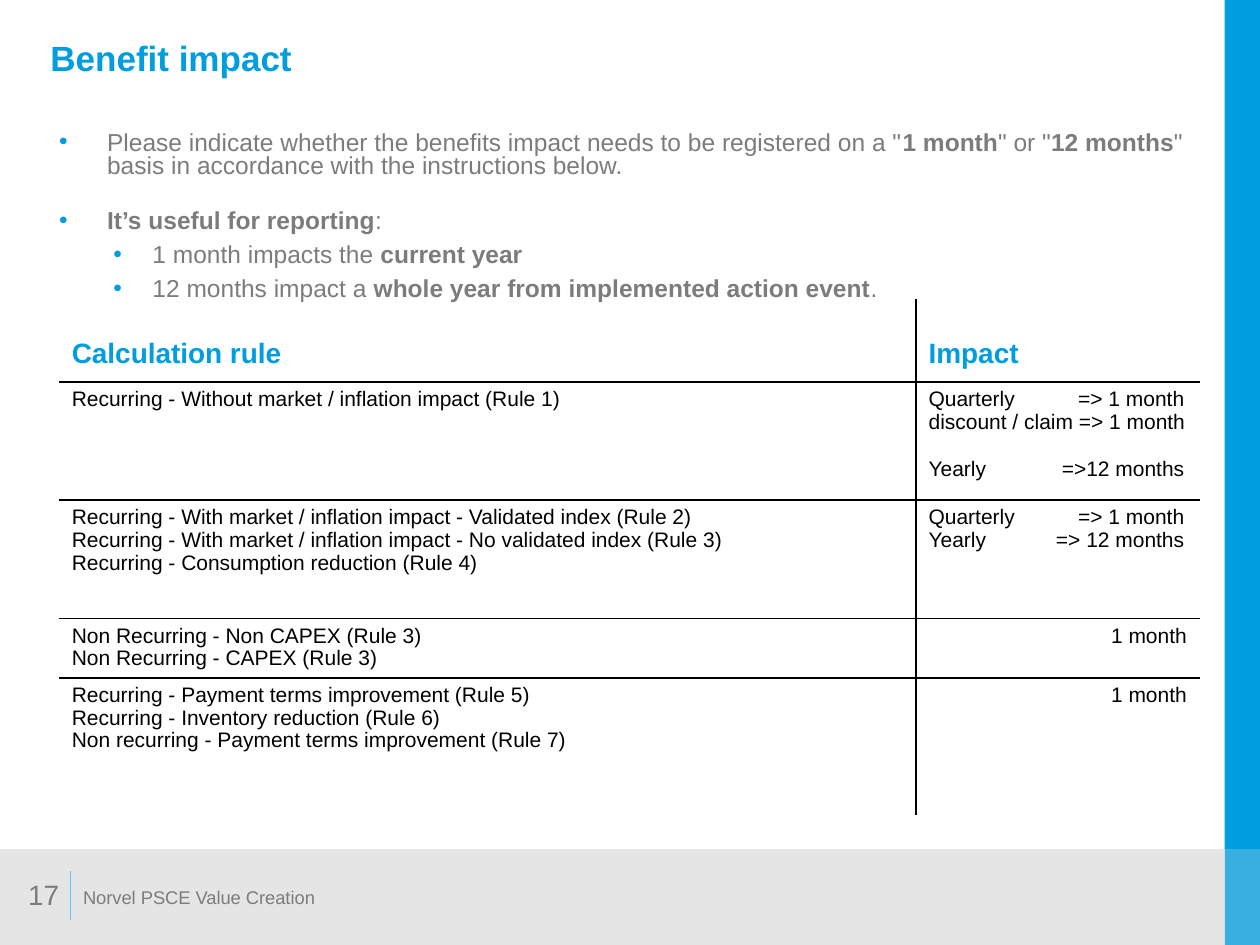
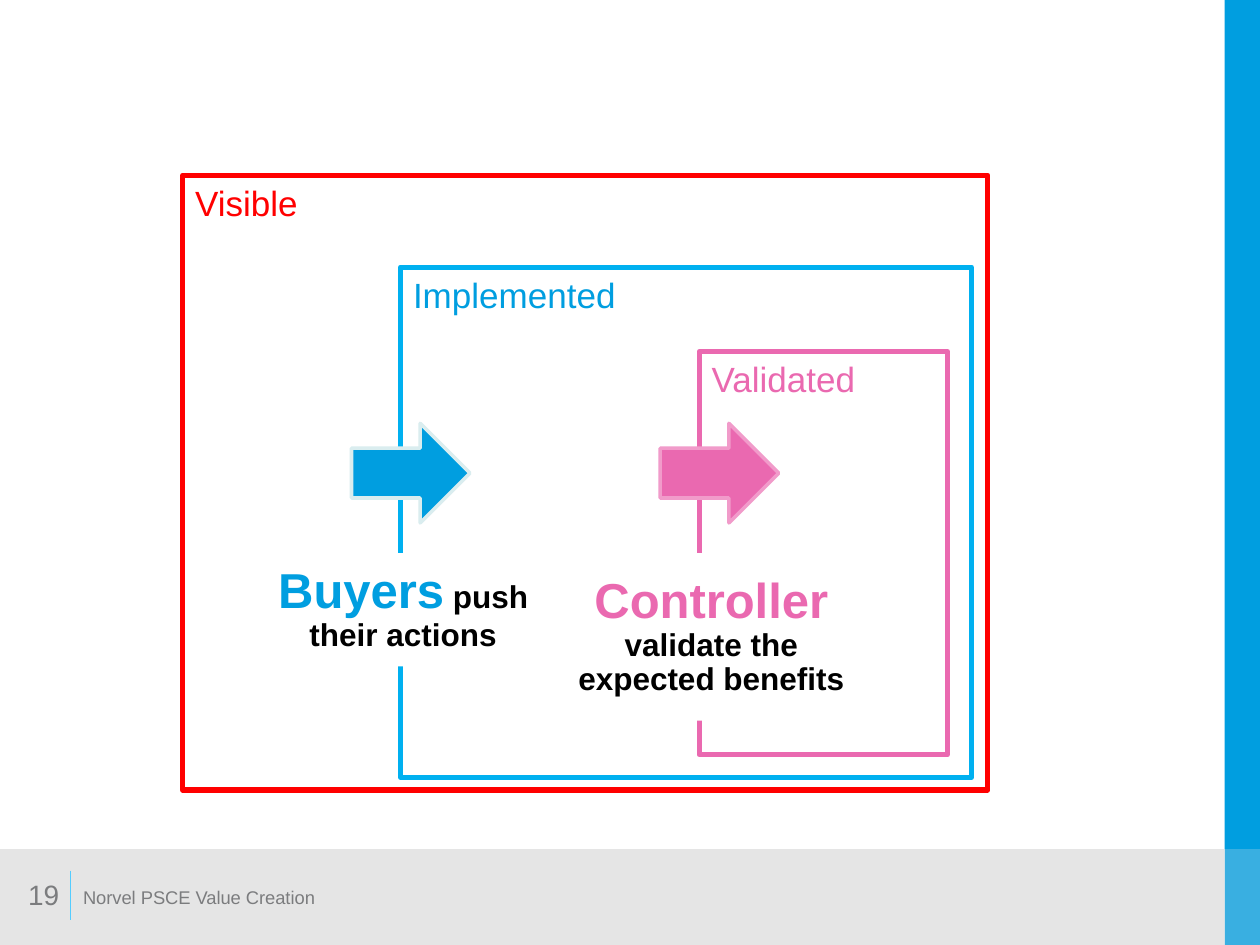
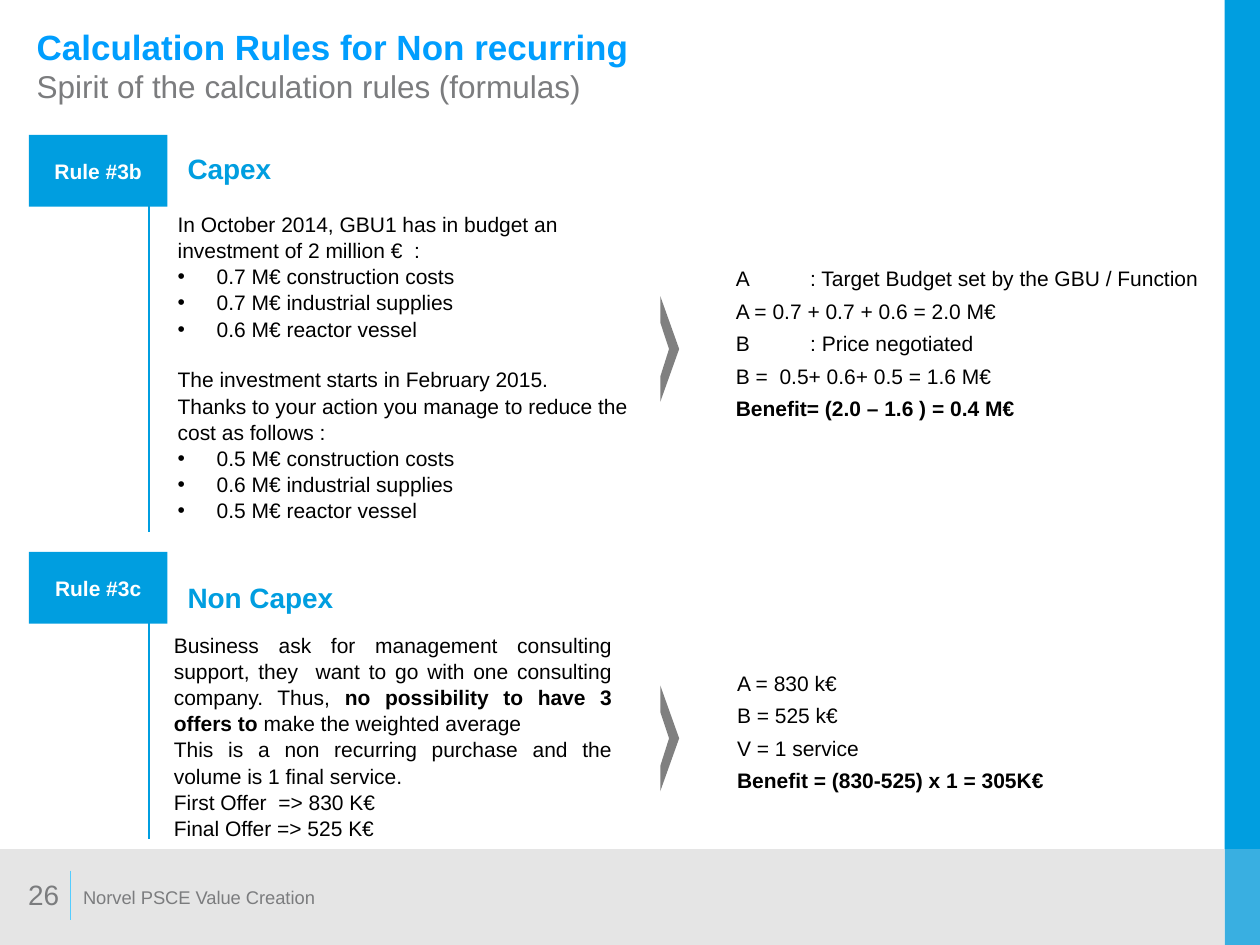
"""Builds three slides on benefit calculation rules."""
from lxml import etree
from pptx import Presentation
from pptx.dml.color import RGBColor
from pptx.enum.shapes import MSO_CONNECTOR, MSO_SHAPE
from pptx.enum.text import MSO_ANCHOR, MSO_AUTO_SIZE, PP_ALIGN
from pptx.oxml.ns import qn
from pptx.util import Inches, Pt

RECTANGLE, ARROW = MSO_SHAPE.RECTANGLE, MSO_SHAPE.RIGHT_ARROW
STRAIGHT = MSO_CONNECTOR.STRAIGHT
TOP, MIDDLE, BOTTOM = MSO_ANCHOR.TOP, MSO_ANCHOR.MIDDLE, MSO_ANCHOR.BOTTOM
LEFT, CENTER, RIGHT, JUSTIFY = PP_ALIGN.LEFT, PP_ALIGN.CENTER, PP_ALIGN.RIGHT, PP_ALIGN.JUSTIFY
FIXED = MSO_AUTO_SIZE.NONE

COLUMNS, ROWS = 100, 75
CELL = Inches(0.1)
BLUE, GRAY, PALE, PINK = "009EE0", "7B7C7E", "E5E5E5", "EA69B0"
BLACK, WHITE, RED = "000000", "FFFFFF", "FF0000"
FLUSH = dict.fromkeys(("margin_left", "margin_top", "margin_right", "margin_bottom"), 0)
BLANK_LINE = Pt(14)
NO_STYLE = "{2D5ABB26-0587-4C30-8999-92F81FD0307C}"


def rgb(code):
    """Turn a hex string into a colour."""
    return RGBColor.from_string(code)


def grid(*values):
    """Turn grid units into lengths."""
    return [int(value * CELL) for value in values]


def set_values(target, values):
    """Set attributes from a dict of format values."""
    for name, value in values.items():
        setattr(target, name, value)


def font(size, color, bold=False):
    """Describe a font."""
    return {"size": Pt(size), "color": color, "bold": bold}


def child(parent, tag, **attributes):
    """Append an XML element."""
    return etree.SubElement(parent, qn(tag), attributes)


def bullet(text, color=BLACK, left=3.1, hang=3.1, **values):
    """Describe a bulleted paragraph."""
    return text, {"bullet": color, "indent": (left, hang), **values}


class Page:
    """Holds the style and the current slide."""

    def __init__(self, deck, layout, number):
        """Add a slide with its bands and footer."""
        self.shapes = deck.slides.add_slide(deck.slide_layouts[layout]).shapes
        edge, floor = 97.2, 67.4
        self.box((edge, 0, COLUMNS - edge, ROWS), fill=BLUE)
        self.box((0, floor, edge, ROWS - floor), fill=PALE)
        corner = self.box((edge, floor, COLUMNS - edge, ROWS - floor), fill=PALE)
        tint = corner._element.spPr.find(qn("a:solidFill"))[0]
        child(tint, "a:alpha", val="25000")
        self.line((5.6, 69.1), (5.6, 73), "53CCFF", 0.75)
        self.text((6.6, 70.3, 63, 2.8), ["Norvel PSCE Value Creation"], font(10.5, GRAY), FLUSH)
        self.text((0, 69, 4.7, 3.9), [str(number)], font(16, GRAY),
                  {**FLUSH, "vertical_anchor": MIDDLE}, alignment=RIGHT)

    def compose(self, frame, paragraphs, style, **common):
        """Fill a text frame; double asterisks switch bold on and off."""
        for index, entry in enumerate(paragraphs):
            content, own = (entry, {}) if isinstance(entry, str) else entry
            values = {**common, **own}
            para = frame.paragraphs[0] if index == 0 else frame.add_paragraph()
            color = values.pop("bullet", None)
            left, hang = values.pop("indent", (0, 0))
            tab = values.pop("tab", None)
            if index == 0:
                values["space_before"] = Pt(0)
            set_values(para, values)
            properties = para._p.get_or_add_pPr()
            if color:
                margin, indent = grid(left, -hang)
                properties.set("marL", str(margin))
                properties.set("indent", str(indent))
                child(child(properties, "a:buClr"), "a:srgbClr", val=color)
                child(properties, "a:buFont", typeface="Arial")
                child(properties, "a:buChar", char="•")
            if tab:
                position, side = tab
                child(child(properties, "a:tabLst"), "a:tab",
                      pos=str(grid(position)[0]), algn=side)
            if isinstance(content, str):
                content = [(piece, {"bold": True} if turn % 2 else {})
                           for turn, piece in enumerate(content.split("**"))]
            for words, change in content:
                if words:
                    span = para.add_run()
                    span.text = words
                    look = {"name": "Arial", **style, **change}
                    span.font.color.rgb = rgb(look.pop("color"))
                    set_values(span.font, look)

    def fill_frame(self, frame, paragraphs, style, layout, **common):
        """Format a text frame and put text into it."""
        set_values(frame, {"word_wrap": True, "auto_size": FIXED,
                           "vertical_anchor": TOP, **layout})
        self.compose(frame, paragraphs, style, **common)

    def text(self, at, paragraphs, style, layout=FLUSH, **common):
        """Add a text box."""
        box = self.shapes.add_textbox(*grid(*at))
        self.fill_frame(box.text_frame, paragraphs, style, layout, **common)

    def placeholder(self, index, at, paragraphs, style, layout, **common):
        """Move and fill a template placeholder."""
        box = self.shapes.title if index == 0 else self.shapes.placeholders[index]
        set_values(box, dict(zip(("left", "top", "width", "height"), grid(*at))))
        self.fill_frame(box.text_frame, paragraphs, style, layout, **common)

    def paint(self, shape, fill, line, width):
        """Set the fill and outline of a shape."""
        shape.shadow.inherit = False
        if fill:
            shape.fill.solid()
            shape.fill.fore_color.rgb = rgb(fill)
        else:
            shape.fill.background()
        if line:
            shape.line.color.rgb = rgb(line)
            shape.line.width = Pt(width)
        else:
            shape.line.fill.background()

    def box(self, at, fill=None, line=None, width=1, kind=RECTANGLE):
        """Add a preset shape."""
        shape = self.shapes.add_shape(kind, *grid(*at))
        self.paint(shape, fill, line, width)
        return shape

    def label(self, at, paragraphs, style, layout, fill=None, line=None, **common):
        """Add a rectangle with text."""
        shape = self.box(at, fill, line, 3)
        self.fill_frame(shape.text_frame, paragraphs, style, layout, **common)

    def line(self, start, end, color, width):
        """Add a straight line."""
        connector = self.shapes.add_connector(STRAIGHT, *grid(*start, *end))
        connector.line.color.rgb = rgb(color)
        connector.line.width = Pt(width)
        child(connector._element.spPr, "a:effectLst")

    def chevron(self, left, top):
        """Add a thin chevron pointing right."""
        outline = [(0, 0), (0, 2.1), (0.7, 4.2), (0, 6.4), (0, 8.4), (1.5, 4.2)]
        points = [grid(left + across, top + down) for across, down in outline]
        builder = self.shapes.build_freeform(*points[0], scale=1.0)
        builder.add_line_segments(points[1:], close=True)
        self.paint(builder.convert_to_shape(), "808080", None, 0)

    def table(self, at, widths, heights, rows):
        """Add a table ruled between its rows and columns."""
        table = self.shapes.add_table(len(rows), len(widths), *grid(*at)).table
        set_values(table, {"first_row": False, "horz_banding": False})
        table._tbl.tblPr.find(qn("a:tableStyleId")).text = NO_STYLE
        for column, width in zip(table.columns, grid(*widths)):
            column.width = width
        for row, height in zip(table.rows, grid(*heights)):
            row.height = height
        for down, cells in enumerate(rows):
            for across, paragraphs in enumerate(cells):
                cell = table.cell(down, across)
                sides = {"a:lnL": across > 0, "a:lnR": across < len(widths) - 1,
                         "a:lnT": down > 0, "a:lnB": down < len(rows) - 1}
                self.rule(cell, [side for side, inner in sides.items() if inner])
                cell.fill.background()
                if down == 0:
                    set_values(cell, {"vertical_anchor": BOTTOM, "margin_bottom": CELL})
                style = font(12, BLACK) if down else font(16, BLUE, True)
                self.compose(cell.text_frame, paragraphs, style, line_spacing=0.97)

    def rule(self, cell, sides):
        """Draw black borders on the given sides of a cell."""
        properties = cell._tc.get_or_add_tcPr()
        for side in sides:
            border = child(properties, side, w=str(int(Pt(1))))
            child(child(border, "a:solidFill"), "a:srgbClr", val=BLACK)


def benefit_impact(deck):
    """Build the slide on benefit impact."""
    page = Page(deck, 1, 17)
    page.placeholder(0, (3, 2.4, 91.3, 4.7), ["Benefit impact"], font(20, BLUE, True),
                     {"vertical_anchor": MIDDLE}, alignment=LEFT, line_spacing=0.95)
    main_point = {"color": BLUE, "left": 4.2, "hang": 3.8, "space_before": Pt(18)}
    detail = {"color": BLUE, "left": 7.8, "space_before": Pt(6), "level": 1}
    page.placeholder(1, (4.3, 10.5, 90.5, 12.6), [
        bullet('Please indicate whether the benefits impact needs to be registered on a '
               '"**1 month**" or "**12 months**" basis in accordance with the '
               'instructions below.', **main_point),
        bullet("**It’s useful for reporting**:", **main_point),
        bullet("1 month impacts the **current year**", **detail),
        bullet("12 months impact a **whole year from implemented action event**.", **detail),
    ], font(14, GRAY), FLUSH, line_spacing=0.8)

    tab = {"tab": (20.3, "r")}
    quarterly = ("Quarterly\t=> 1 month", tab)
    one_month = [("1 month", {"alignment": RIGHT})]
    page.table((4.7, 23.7, 90.5, 41), (68, 22.5), (6.6, 9.4, 9.4, 4.7, 10.9), [
        (["Calculation rule"], ["Impact"]),
        (["Recurring - Without market / inflation impact (Rule 1)"],
         [quarterly, "discount / claim => 1 month",
          ("Yearly\t=>12 months", {**tab, "space_before": BLANK_LINE})]),
        (["Recurring - With market / inflation impact - Validated index (Rule 2)",
          "Recurring - With market / inflation impact - No validated index (Rule 3)",
          "Recurring - Consumption reduction (Rule 4)"],
         [quarterly, ("Yearly\t=> 12 months", tab)]),
        (["Non Recurring - Non CAPEX (Rule 3)", "Non Recurring - CAPEX (Rule 3)"], one_month),
        (["Recurring - Payment terms improvement (Rule 5)",
          "Recurring - Inventory reduction (Rule 6)",
          "Non recurring - Payment terms improvement (Rule 7)"], one_month),
    ])


def action_status(deck):
    """Build the slide on the nested action statuses."""
    page = Page(deck, 6, 19)
    for name, at, line, color in [
        ("Visible", (14.5, 13.9, 63.9, 48.8), RED, RED),
        ("Implemented", (31.8, 21.2, 45.3, 40.5), "00B0F0", BLUE),
        ("Validated", (55.5, 27.9, 19.7, 32), PINK, PINK),
    ]:
        page.label(at, [name], font(20, color), {}, line=line, alignment=LEFT)
    for actor, task, color, at in [
        ("Buyers", " push their actions", BLUE, (21.7, 43.9, 20.6, 9)),
        ("Controller ", "validate the expected benefits", PINK, (45, 43.9, 22.9, 13.3)),
    ]:
        spans = [(actor, font(28, color, True)), (task, {})]
        page.label(at, [(spans, {})], font(18, BLACK, True),
                   {**FLUSH, "vertical_anchor": MIDDLE}, fill=WHITE,
                   alignment=CENTER, line_spacing=0.9)
    for left, fill, line in [(27.9, BLUE, "DAEDEF"), (52.4, PINK, "F19BCA")]:
        page.box((left, 33.6, 9.4, 7.9), fill, line, 2, ARROW)


def non_recurring(deck):
    """Build the slide on the rules for non recurring benefits."""
    page = Page(deck, 5, 26)
    subtitle = [("Spirit of the calculation rules (formulas)", font(18, GRAY))]
    page.placeholder(0, (1.9, -1.1, 90, 12.5),
                     ["Calculation Rules for Non recurring", (subtitle, {})],
                     font(20, "009EFE", True), {"vertical_anchor": MIDDLE}, alignment=LEFT)
    for tag, name, top, name_top, bottom, arrow_top in [
        ("Rule #3b", "Capex", 10.7, 11.5, 42.2, 23.5),
        ("Rule #3c", "Non Capex", 43.8, 45.6, 66.6, 54.4),
    ]:
        page.line((11.8, top + 5.5), (11.8, bottom), BLUE, 1)
        page.label((2.3, top, 11, 5.7), [tag], font(12, WHITE, True),
                   {**FLUSH, "vertical_anchor": MIDDLE}, fill=BLUE, alignment=CENTER)
        page.text((13.9, name_top, 80, 3.7), [name], font(16, BLUE, True), {})
        page.chevron(52.4, arrow_top)

    plain, pitch = font(12, BLACK), 1.04
    page.text((14.1, 16.7, 35.8, 25.5), [
        "In October 2014, GBU1 has in budget an investment of 2 million €  :",
        bullet("0.7 M€ construction costs"),
        bullet("0.7 M€ industrial supplies"),
        bullet("0.6 M€ reactor vessel"),
        ("The investment starts in February 2015.", {"space_before": BLANK_LINE}),
        "Thanks to your action you manage to reduce the cost as follows :",
        bullet("0.5 M€ construction costs"),
        bullet("0.6 M€ industrial supplies"),
        bullet("0.5 M€ reactor vessel"),
    ], plain, line_spacing=pitch)
    page.text((13.8, 50.1, 34.8, 19), [
        "Business ask for management consulting support, they  want to go with one "
        "consulting company. Thus, **no possibility to have 3 offers to** make the "
        "weighted average",
        "This is a non recurring purchase and the volume is 1 final service.",
        "First Offer  => 830 K€",
        "Final Offer => 525 K€",
    ], plain, alignment=JUSTIFY, line_spacing=pitch)

    tab = {"tab": (5.9, "l")}
    for at, formulas in [
        ((58.4, 21, 37.9, 16.8), [
            ("A\t: Target Budget set by the GBU / Function", tab),
            "A = 0.7 + 0.7 + 0.6 = 2.0 M€",
            ("B\t: Price negotiated", tab),
            "B =  0.5+ 0.6+ 0.5 = 1.6 M€",
            "**Benefit= (2.0 – 1.6 ) = 0.4 M€**"]),
        ((58.5, 53.1, 38.6, 11.1), [
            "A = 830 k€", "B = 525 k€", "V = 1 service",
            "**Benefit = (830-525) x 1 = 305K€**"]),
    ]:
        page.text(at, formulas, plain, space_before=Pt(3.6), line_spacing=pitch)


def main():
    """Build and save the deck."""
    deck = Presentation()
    deck.slide_width, deck.slide_height = grid(COLUMNS, ROWS)
    for build in (benefit_impact, action_status, non_recurring):
        build(deck)
    deck.save("out.pptx")


if __name__ == "__main__":
    main()
